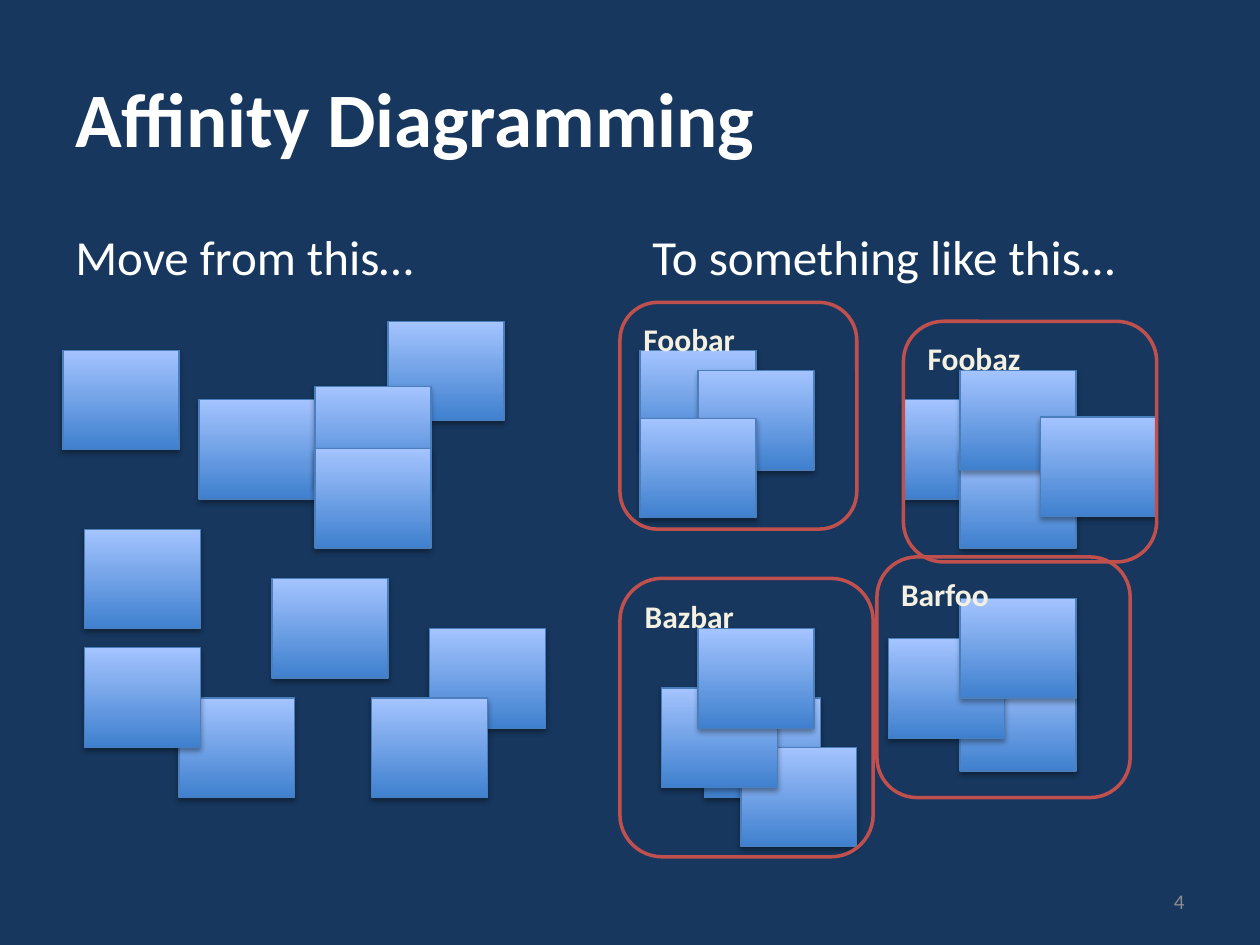
import pptx
import pptx.dml.color
import pptx.enum.shapes
import pptx.enum.text
import pptx.oxml
import pptx.oxml.ns
import pptx.util

COLORS = {
    "background": "17375E", "text": "FFFFFF", "number": "8C8C8C",
    "note_bottom": "3F80CE", "note_top": "A4C4FF", "note_edge": "4B7EBC",
    "group_edge": "C0504D", "label": "F4F1E3", "label_outline": "054697",
    "shadow": "000000",
}
FONT = "Calibri"
COLUMNS, ROWS = 100, 75
NOTE_SIZE = (9.2, 7.9)

TITLE = ("Affinity Diagramming", (5, 3, 90, 12.5))
HEADINGS = [
    ("Move from this…", (5, 17.5, 44.2, 49.5)),
    ("To something like this…", (50.8, 17.5, 44.2, 49.5)),
]
PAGE_NUMBER = ("4", (71.7, 69.5, 23.3, 4))

LOOSE_NOTES = [
    (5, 27.8), (15.8, 31.7), (30.8, 25.5), (6.7, 42), (25, 30.7), (14.2, 55.4),
    (25, 35.6), (6.7, 51.4), (34.1, 49.9), (21.6, 45.9), (29.5, 55.4),
]
GROUPS = [
    ("Foobar", (49.2, 24, 18.8, 18), [(50.8, 27.8), (55.4, 29.4), (50.8, 33.2)]),
    ("Foobaz", (71.7, 25.5, 20.1, 19.1),
     [(71.7, 31.7), (76.2, 35.6), (76.2, 29.4), (82.6, 33.1)]),
    ("Barfoo", (69.6, 44.2, 20.1, 19.1), [(76.2, 53.3), (70.5, 50.7), (76.2, 47.5)]),
    ("Bazbar", (49.2, 45.9, 20.1, 22.1),
     [(55.9, 55.4), (58.8, 59.3), (52.5, 54.6), (55.4, 49.9)]),
]

SHADOW = (
    '<a:effectLst %s><a:outerShdw blurRad="39370" dist="22860" dir="5400000" rotWithShape="0">'
    '<a:srgbClr val="%s"><a:alpha val="35000"/></a:srgbClr></a:outerShdw></a:effectLst>'
) % (pptx.oxml.ns.nsdecls("a"), COLORS["shadow"])
LABEL_OUTLINE = (
    '<a:ln %s w="12700"><a:solidFill><a:srgbClr val="%s"/></a:solidFill></a:ln>'
) % (pptx.oxml.ns.nsdecls("a"), COLORS["label_outline"])

ANCHOR = pptx.enum.text.MSO_ANCHOR
ALIGN = pptx.enum.text.PP_ALIGN
SHAPE = pptx.enum.shapes.MSO_SHAPE

deck = pptx.Presentation()
deck.slide_width = pptx.util.Inches(10)
deck.slide_height = pptx.util.Inches(7.5)
slide = deck.slides.add_slide(deck.slide_layouts[6])


def color(key):
    return pptx.dml.color.RGBColor.from_string(COLORS[key])


def place(left, top, width, height):
    column = deck.slide_width / COLUMNS
    row = deck.slide_height / ROWS
    return round(left * column), round(top * row), round(width * column), round(height * row)


def write(holder, text, size, ink="text", bold=False, align=ALIGN.LEFT,
          anchor=ANCHOR.TOP, before=0):
    frame = holder.text_frame
    frame.word_wrap = True
    frame.vertical_anchor = anchor
    paragraph = frame.paragraphs[0]
    paragraph.alignment = align
    paragraph.space_before = pptx.util.Pt(before)
    run = paragraph.add_run()
    run.text = text
    run.font.name = FONT
    run.font.size = pptx.util.Pt(size)
    run.font.bold = bold
    run.font.color.rgb = color(ink)
    return run


def add_text(text, box, **style):
    write(slide.shapes.add_textbox(*place(*box)), text, **style)


def add_outlined(kind, box, edge, weight):
    outlined = slide.shapes.add_shape(kind, *place(*box))
    outlined.shadow.inherit = False
    outlined.line.color.rgb = color(edge)
    outlined.line.width = pptx.util.Pt(weight)
    return outlined


def add_note(corner):
    note = add_outlined(SHAPE.RECTANGLE, corner + NOTE_SIZE, "note_edge", 0.75)
    note.fill.gradient()
    note.fill.gradient_angle = 90
    for stop, key in zip(note.fill.gradient_stops, ("note_bottom", "note_top")):
        stop.color.rgb = color(key)
    properties = note._element.spPr
    properties.replace(properties.find(pptx.oxml.ns.qn("a:effectLst")),
                       pptx.oxml.parse_xml(SHADOW))


def add_group(label, box):
    group = add_outlined(SHAPE.ROUNDED_RECTANGLE, box, "group_edge", 2)
    group.fill.background()
    run = write(group, label, size=18, ink="label", bold=True)
    run.font._element.insert(0, pptx.oxml.parse_xml(LABEL_OUTLINE))


slide.background.fill.solid()
slide.background.fill.fore_color.rgb = color("background")

add_text(*TITLE, size=44, bold=True, anchor=ANCHOR.MIDDLE)
for heading in HEADINGS:
    add_text(*heading, size=28, before=5.6)
add_text(*PAGE_NUMBER, size=12, ink="number", align=ALIGN.RIGHT, anchor=ANCHOR.MIDDLE)

for corner in LOOSE_NOTES + [corner for group in GROUPS for corner in group[2]]:
    add_note(corner)
for label, box, members in GROUPS:
    add_group(label, box)

deck.save("out.pptx")
